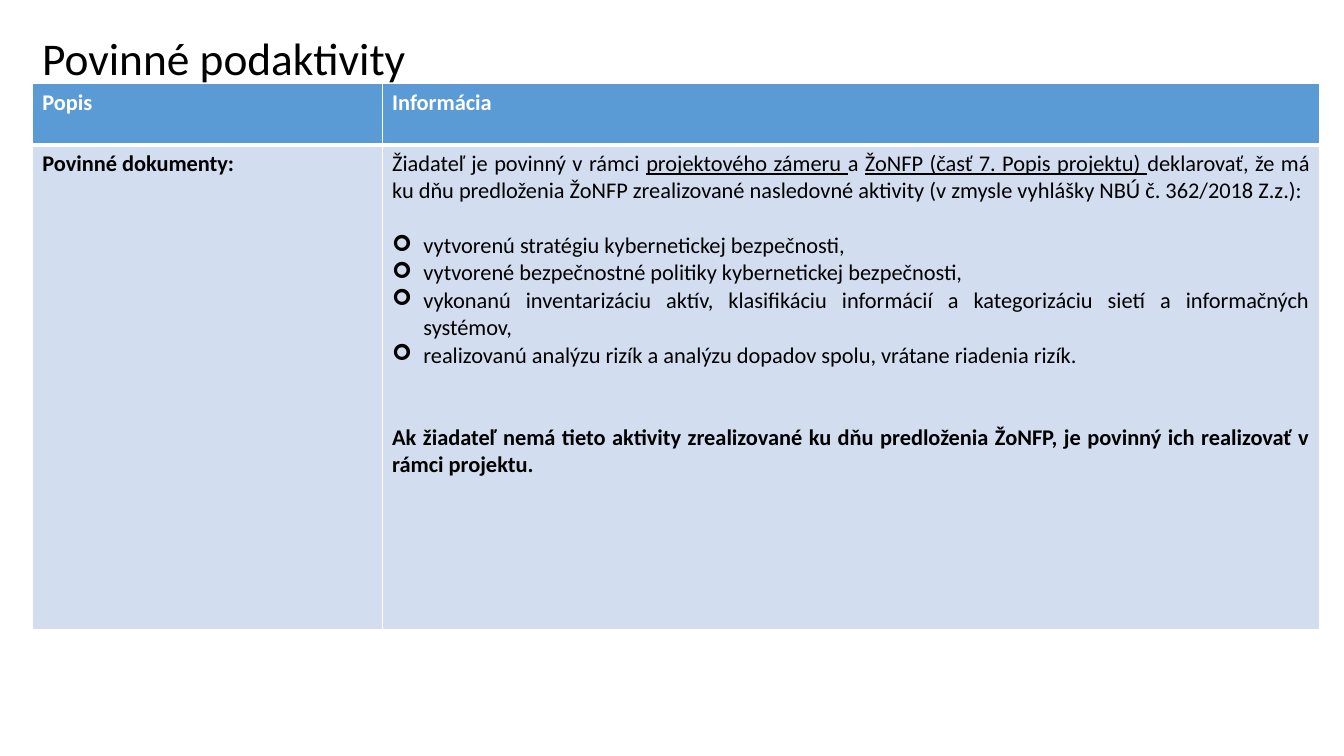
from lxml.etree import SubElement
from pptx import Presentation
from pptx.dml.color import RGBColor
from pptx.enum.text import MSO_ANCHOR, PP_ALIGN
from pptx.oxml.ns import qn
from pptx.util import Pt

EMU_PER_PX = 9144
FONT = "Calibri"
BLACK = RGBColor(0x00, 0x00, 0x00)
WHITE = RGBColor(0xFF, 0xFF, 0xFF)
HEADER_BLUE = RGBColor(0x5B, 0x9B, 0xD5)
BODY_BLUE = RGBColor(0xD2, 0xDE, 0xEF)
TEXT_SIZE = 16
LINE_HEIGHT = 19.5
COLUMNS = (347, 930)
ROWS = (61, 481)
HEADINGS = ("Popis", "Informácia")
INTRO = (
    ("Žiadateľ je povinný v rámci ", False),
    ("projektového zámeru ", True),
    ("a ", False),
    ("ŽoNFP (časť 7. Popis projektu) ", True),
    ("deklarovať, že má ku dňu predloženia ŽoNFP zrealizované nasledovné "
     "aktivity (v zmysle vyhlášky NBÚ č. 362/2018 Z.z.):", False),
)
ACTIVITIES = (
    "vytvorenú stratégiu kybernetickej bezpečnosti,",
    "vytvorené bezpečnostné politiky kybernetickej bezpečnosti,",
    "vykonanú inventarizáciu aktív, klasifikáciu informácií a kategorizáciu "
    "sietí a informačných systémov,",
    "realizovanú analýzu rizík a analýzu dopadov spolu, vrátane riadenia rizík.",
)
CLOSING = ("Ak žiadateľ nemá tieto aktivity zrealizované ku dňu predloženia "
           "ŽoNFP, je povinný ich realizovať v rámci projektu.")


def px(length):
    """Turn whole pixels into EMU."""
    return length * EMU_PER_PX


def style_span(span, size=TEXT_SIZE, color=BLACK, bold=False, underline=False):
    """Format one run of text."""
    span.font.name = FONT
    span.font.size = Pt(size)
    span.font.color.rgb = color
    span.font.bold = bold
    span.font.underline = underline


def write_para(para, text, align=PP_ALIGN.JUSTIFY, **style):
    """Write a paragraph in a single style."""
    para.text = text
    para.alignment = align
    style_span(para.runs[0], **style)


def add_bullet(para):
    """Give a paragraph an arrow bullet with a hanging indent."""
    properties = para._p.get_or_add_pPr()
    properties.set("marL", str(px(31)))
    properties.set("indent", str(px(-31)))
    SubElement(properties, qn("a:buFont"), typeface="Wingdings")
    SubElement(properties, qn("a:buChar"), char="➢")


def style_cell(cell, fill, bottom_width=1):
    """Draw white borders around a cell and fill it."""
    properties = cell._tc.get_or_add_tcPr()
    for side in ("L", "R", "T", "B"):
        width = bottom_width if side == "B" else 1
        border = SubElement(properties, qn(f"a:ln{side}"), w=str(Pt(width)))
        paint = SubElement(border, qn("a:solidFill"))
        SubElement(paint, qn("a:srgbClr"), val=str(WHITE))
    cell.fill.solid()
    cell.fill.fore_color.rgb = fill


def add_title(page, text):
    """Add the heading above the table."""
    box = page.shapes.add_textbox(px(32), px(32), px(1000), px(51))
    frame = box.text_frame
    frame.word_wrap = True
    frame.vertical_anchor = MSO_ANCHOR.MIDDLE
    frame.margin_top, frame.margin_bottom = px(10), px(4)
    para = frame.paragraphs[0]
    write_para(para, text, PP_ALIGN.LEFT, size=32.4)
    para.line_spacing = 0.9


def write_information(frame):
    """Write the introduction, the list of activities and the closing."""
    intro = frame.paragraphs[0]
    intro.alignment = PP_ALIGN.JUSTIFY
    intro.space_after = Pt(LINE_HEIGHT)
    for text, underline in INTRO:
        span = intro.add_run()
        span.text = text
        style_span(span, underline=underline)
    for activity in ACTIVITIES:
        para = frame.add_paragraph()
        write_para(para, activity)
        add_bullet(para)
    closing = frame.add_paragraph()
    write_para(closing, CLOSING, bold=True)
    closing.space_before = Pt(2 * LINE_HEIGHT)


def add_activity_table(page):
    """Add the table of mandatory activities."""
    frame = page.shapes.add_table(len(ROWS), len(COLUMNS), px(32), px(83),
                                  px(sum(COLUMNS)), px(sum(ROWS)))
    table = frame.table
    for column, width in zip(table.columns, COLUMNS):
        column.width = px(width)
    for row, height in zip(table.rows, ROWS):
        row.height = px(height)
    for index, heading in enumerate(HEADINGS):
        header = table.cell(0, index)
        style_cell(header, HEADER_BLUE, bottom_width=3)
        write_para(header.text_frame.paragraphs[0], heading, PP_ALIGN.LEFT,
                   color=WHITE, bold=True)
        style_cell(table.cell(1, index), BODY_BLUE)
    write_para(table.cell(1, 0).text_frame.paragraphs[0],
               "Povinné dokumenty:", bold=True)
    write_information(table.cell(1, 1).text_frame)


def main():
    """Build and save the slide."""
    deck = Presentation()
    deck.slide_width, deck.slide_height = px(1333), px(750)
    page = deck.slides.add_slide(deck.slide_layouts[6])
    add_title(page, "Povinné podaktivity")
    add_activity_table(page)
    deck.save("out.pptx")


if __name__ == "__main__":
    main()
